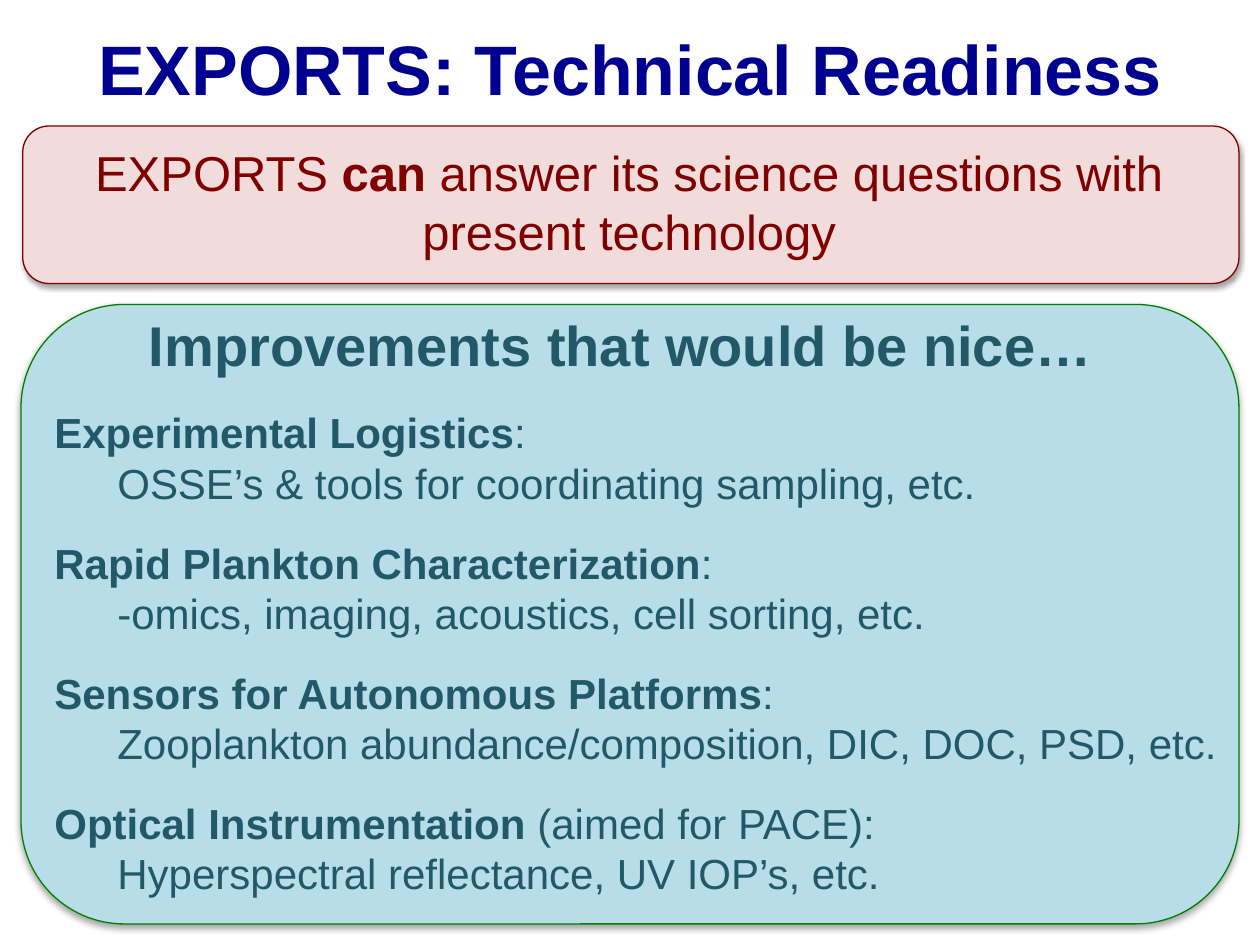
import pptx
import pptx.dml.color
import pptx.enum.shapes
import pptx.enum.text
import pptx.oxml
import pptx.oxml.ns
import pptx.util

Pt = pptx.util.Pt
RGB = pptx.dml.color.RGBColor
ALIGN = pptx.enum.text.PP_ALIGN
ANCHOR = pptx.enum.text.MSO_ANCHOR

NAVY = RGB(0x00, 0x00, 0x90)
MAROON = RGB(0x80, 0x00, 0x00)
PINK = RGB(0xF2, 0xDC, 0xDB)
GREEN = RGB(0x00, 0x80, 0x00)
SKY = RGB(0xB7, 0xDE, 0xE8)
TEAL = RGB(0x21, 0x59, 0x68)

SHADOW = (
    f'<a:outerShdw {pptx.oxml.ns.nsdecls("a")} blurRad="{Pt(3.1)}" dist="{Pt(1.8)}" '
    'dir="5400000" rotWithShape="0"><a:srgbClr val="000000">'
    '<a:alpha val="35000"/></a:srgbClr></a:outerShdw>'
)

deck = pptx.Presentation()
deck.slide_width, deck.slide_height = Pt(720), Pt(540)
slide = deck.slides.add_slide(deck.slide_layouts[6])

# Rounded panels
for box, fill, edge in [
    ((13, 72, 695, 90), PINK, MAROON),
    ((12, 174, 696, 354), SKY, GREEN),
]:
    panel = slide.shapes.add_shape(
        pptx.enum.shapes.MSO_SHAPE.ROUNDED_RECTANGLE, *map(Pt, box))
    panel.fill.solid()
    panel.fill.fore_color.rgb = fill
    panel.line.color.rgb = edge
    panel.line.width = Pt(0.75)
    panel.shadow.inherit = False
    effects = panel._element.spPr.find(pptx.oxml.ns.qn("a:effectLst"))
    effects.append(pptx.oxml.parse_xml(SHADOW))


def add_text(box, paras, size, color, align=ALIGN.LEFT, anchor=ANCHOR.TOP):
    """Each paragraph is (indent, space before, [(text, bold), ...])."""
    frame = slide.shapes.add_textbox(*map(Pt, box)).text_frame
    frame.word_wrap = True
    frame.vertical_anchor = anchor
    for i, (indent, before, runs) in enumerate(paras):
        para = frame.paragraphs[0] if i == 0 else frame.add_paragraph()
        para._p.get_or_add_pPr().set("marL", str(Pt(indent)))
        para.alignment = align
        para.space_before = Pt(before)
        for text, bold in runs:
            run = para.add_run()
            run.text = text
            run.font.color.rgb = color
            style = {"name": "Arial", "size": Pt(size), "bold": bold}
            for key, value in style.items():
                setattr(run.font, key, value)


add_text((29, 7, 662, 63), [(0, 0, [("EXPORTS: Technical Readiness", True)])],
         40, NAVY, ALIGN.CENTER, ANCHOR.MIDDLE)

claim = [("EXPORTS ", False), ("can", True),
         (" answer its science questions with present technology", False)]
add_text((12, 78, 695, 75), [(0, 0, claim)], 28, MAROON, ALIGN.CENTER)

add_text((78, 174, 564, 46), [(0, 0, [("Improvements that would be nice…", True)])],
         32, TEAL)

topics = [
    ("Experimental Logistics", ":",
     "OSSE’s & tools for coordinating sampling, etc."),
    ("Rapid Plankton Characterization", ":",
     "-omics, imaging, acoustics, cell sorting, etc."),
    ("Sensors for Autonomous Platforms", ":",
     "Zooplankton abundance/composition, DIC, DOC, PSD, etc."),
    ("Optical Instrumentation ", "(aimed for PACE):",
     "Hyperspectral reflectance, UV IOP’s, etc."),
]
paras = []
for head, tail, detail in topics:
    paras.append((0, 16.8 if paras else 0, [(head, True), (tail, False)]))
    paras.append((36, 0, [(detail, False)]))
add_text((24, 229, 684, 291), paras, 24, TEAL)

deck.save("out.pptx")
